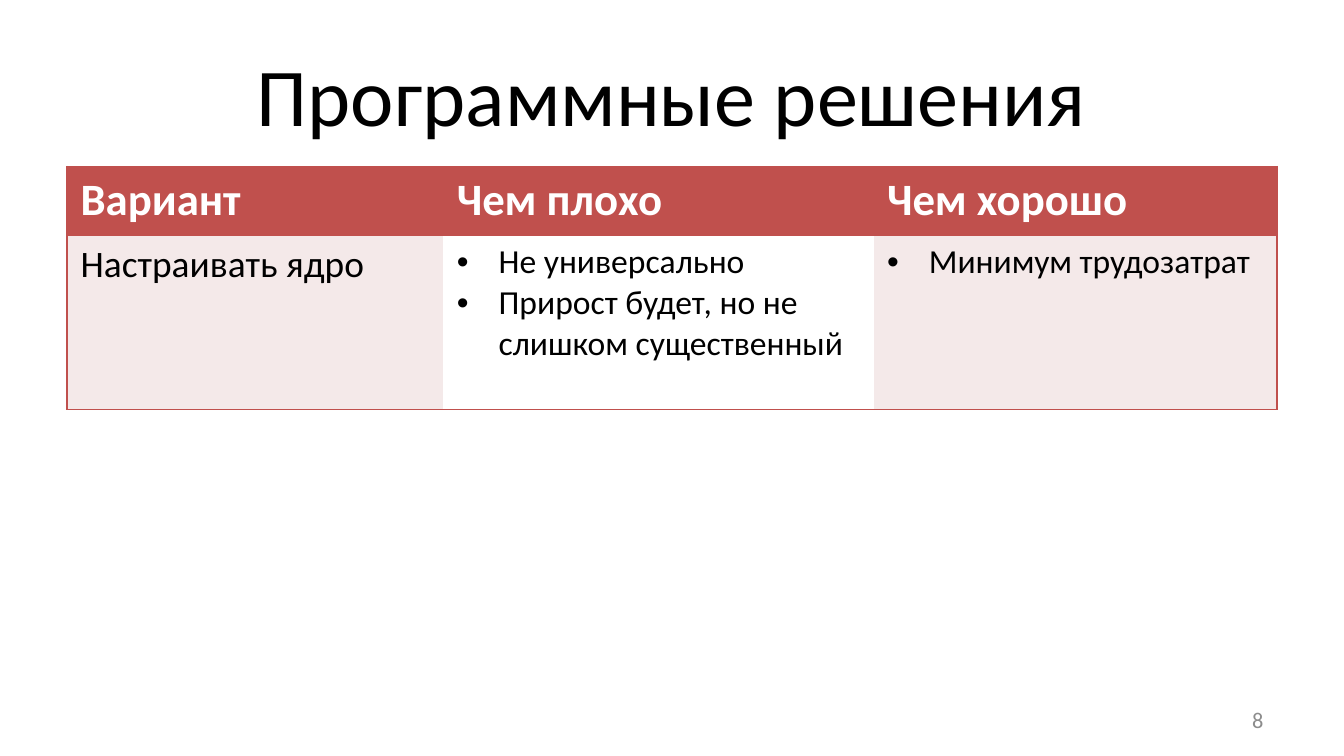
from lxml.etree import SubElement
from pptx import Presentation
from pptx.dml.color import RGBColor
from pptx.enum.text import MSO_ANCHOR as Anchor, PP_ALIGN as Align
from pptx.oxml.ns import qn
from pptx.util import Cm, Pt

RED, PINK, WHITE, BLACK, GRAY = "C0504D", "F4E9E9", "FFFFFF", "000000", "8C8C8C"
HEADINGS = ["Вариант", "Чем плохо", "Чем хорошо"]
OPTION = [
    ["Настраивать ядро"],
    ["Не универсально", "Прирост будет, но не слишком существенный"],
    ["Минимум трудозатрат"],
]
COLUMN_WIDTHS = [7.11, 8.13, 7.62]
ROW_HEIGHTS = [1.27, 3.3]


def color(code):
    """Turn a hex string into a colour."""
    return RGBColor.from_string(code)


def apply(target, values):
    """Set attributes of an object from a dict."""
    for name, value in values.items():
        setattr(target, name, value)


class SlideBuilder:
    """Hold the style and the current slide."""

    font = "Calibri"
    indent = 0.79

    def __init__(self, page):
        """Start on the given slide."""
        self.page = page

    def add_lines(self, frame, lines, size, ink, bold=False, align=Align.LEFT, bullets=False):
        """Fill a text frame with one paragraph per line."""
        for index, line in enumerate(lines):
            para = frame.add_paragraph() if index else frame.paragraphs[0]
            para.alignment = align
            span = para.add_run()
            span.text = line
            apply(span.font, {"name": self.font, "size": Pt(size), "bold": bold})
            span.font.color.rgb = color(ink)
            if bullets:
                self.bullet(para)

    def bullet(self, para):
        """Give a paragraph a hanging round bullet."""
        props = para._p.get_or_add_pPr()
        props.set("marL", str(Cm(self.indent)))
        props.set("indent", str(-Cm(self.indent)))
        SubElement(props, qn("a:buFont"), typeface="Arial")
        SubElement(props, qn("a:buChar"), char="•")

    def place(self, box, left, top, width, height):
        """Move and size a shape and centre its text vertically."""
        apply(box, {"left": Cm(left), "top": Cm(top), "width": Cm(width), "height": Cm(height)})
        apply(box.text_frame, {"word_wrap": True, "vertical_anchor": Anchor.MIDDLE})

    def title(self, text, *area):
        """Format the title placeholder."""
        box = self.page.shapes.title
        self.place(box, *area)
        self.add_lines(box.text_frame, [text], 44, BLACK, align=Align.CENTER)

    def label(self, text, *area):
        """Add a small right-aligned text box."""
        box = self.page.shapes.add_textbox(0, 0, 0, 0)
        self.place(box, *area)
        self.add_lines(box.text_frame, [text], 12, GRAY, align=Align.RIGHT)

    def borders(self, cell, sides):
        """Draw the named sides of a cell and clear the others."""
        props = cell._tc.get_or_add_tcPr()
        for side in "LRTB":
            line = SubElement(props, qn(f"a:ln{side}"), w=str(Pt(1)))
            if side in sides:
                fill = SubElement(line, qn("a:solidFill"))
                SubElement(fill, qn("a:srgbClr"), val=RED)
            else:
                SubElement(line, qn("a:noFill"))

    def cell(self, cell, lines, fill, sides, **style):
        """Fill, outline and letter one table cell."""
        self.borders(cell, sides)
        cell.fill.solid()
        cell.fill.fore_color.rgb = color(fill)
        self.add_lines(cell.text_frame, lines, **style)

    def table(self, left, top):
        """Add the comparison table."""
        area = [Cm(n) for n in (left, top, sum(COLUMN_WIDTHS), sum(ROW_HEIGHTS))]
        table = self.page.shapes.add_table(2, len(HEADINGS), *area).table
        apply(table, {"first_row": False, "horz_banding": False})
        for row, height in zip(table.rows, ROW_HEIGHTS):
            row.height = Cm(height)
        for col, width in enumerate(COLUMN_WIDTHS):
            table.columns[col].width = Cm(width)
            sides = "TB" + {0: "L", len(HEADINGS) - 1: "R"}.get(col, "")
            self.cell(table.cell(0, col), [HEADINGS[col]], RED, sides, size=24, ink=WHITE, bold=True)
            self.cell(table.cell(1, col), OPTION[col], WHITE if col % 2 else PINK, sides,
                      size=18 if col else 20, ink=BLACK, bullets=col > 0)


def main():
    """Build and save the slide."""
    deck = Presentation()
    apply(deck, {"slide_width": Cm(25.4), "slide_height": Cm(14.29)})
    page = deck.slides.add_slide(deck.slide_layouts[5])
    builder = SlideBuilder(page)
    builder.title("Программные решения", 1.27, 0.58, 22.86, 2.39)
    builder.table(1.27, 3.15)
    builder.label("8", 18.21, 13.23, 5.92, 0.76)
    deck.save("out.pptx")


if __name__ == "__main__":
    main()
